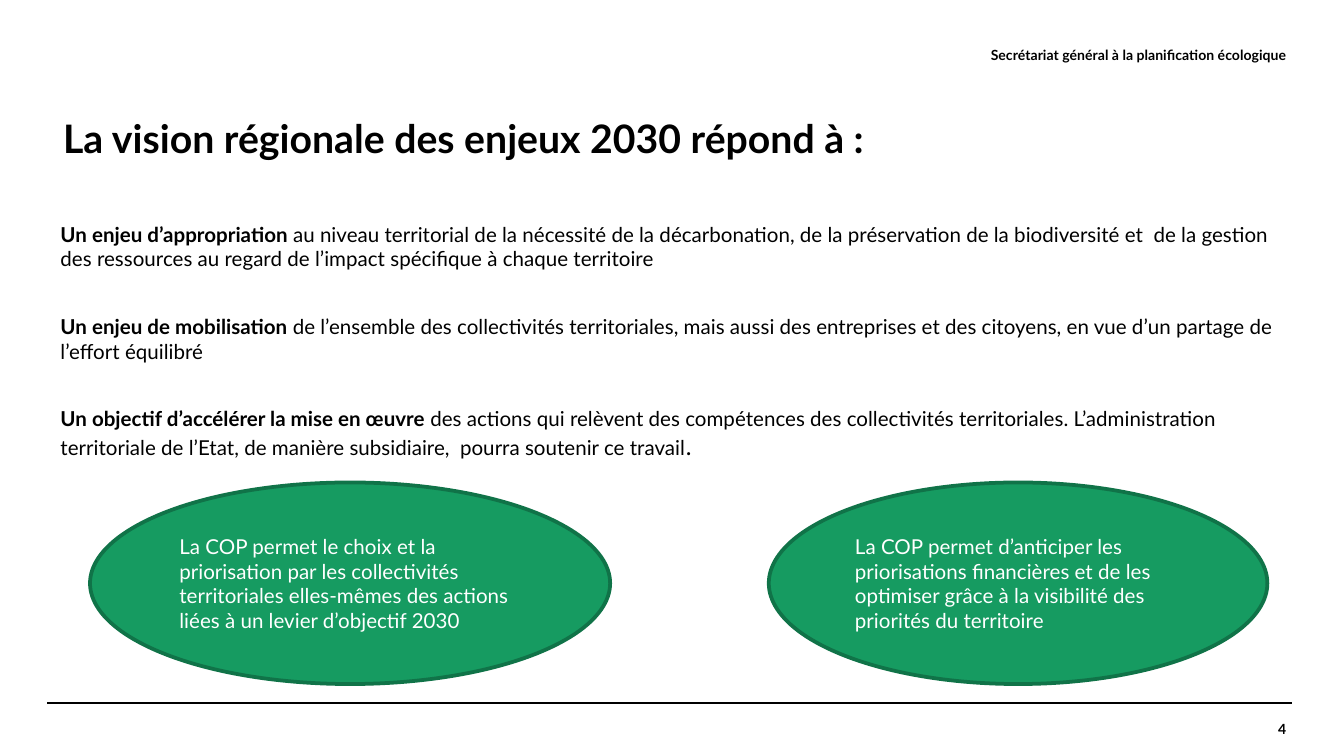
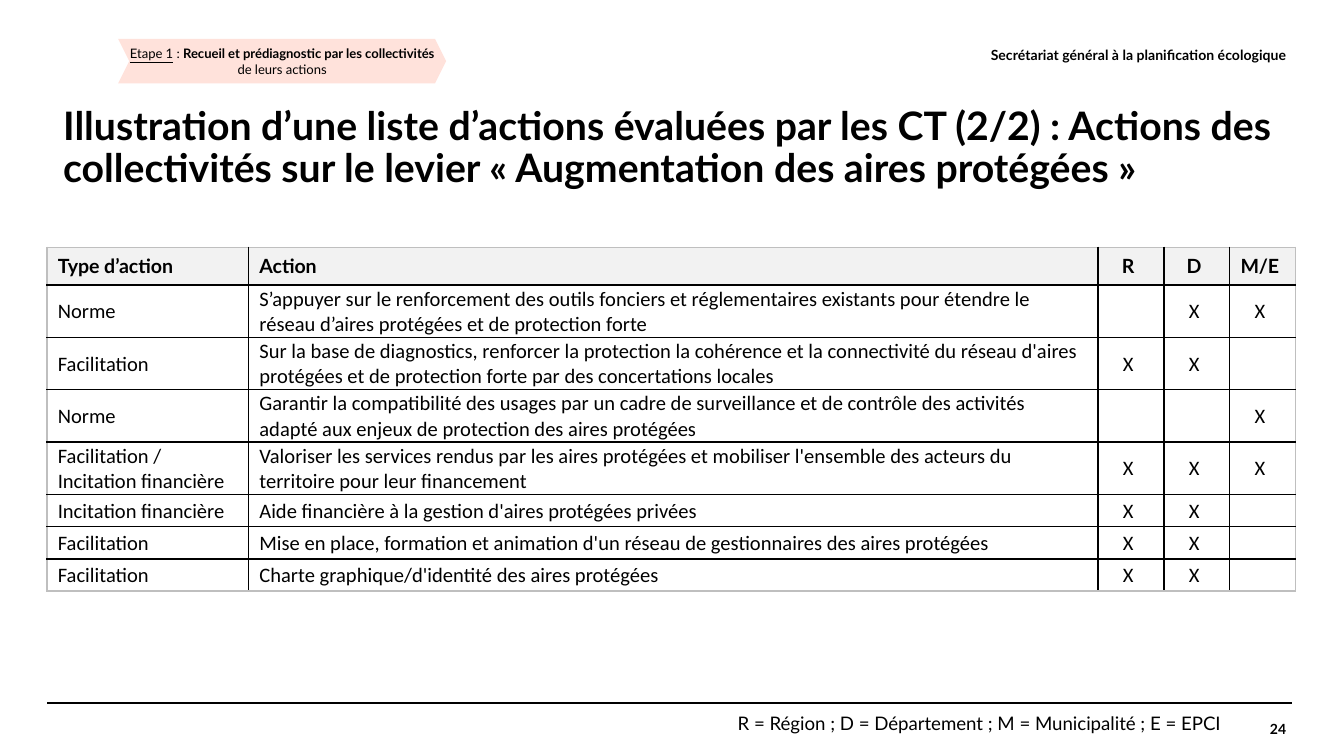
from dataclasses import dataclass
from typing import NamedTuple

from lxml.etree import SubElement
from pptx import Presentation
from pptx.dml.color import RGBColor
from pptx.enum.shapes import MSO_CONNECTOR, MSO_SHAPE
from pptx.enum.text import MSO_ANCHOR, MSO_AUTO_SIZE, PP_ALIGN
from pptx.oxml.ns import qn
from pptx.util import Inches, Pt

BLACK = RGBColor(0x00, 0x00, 0x00)
WHITE = RGBColor(0xFF, 0xFF, 0xFF)
GREEN = RGBColor(0x16, 0x9B, 0x61)
DARK_GREEN = RGBColor(0x10, 0x73, 0x48)
PINK = RGBColor(0xFF, 0xE2, 0xDB)
HEADER_GREY = RGBColor(0xF2, 0xF2, 0xF2)
FRAME_GREY = RGBColor(0xBF, 0xBF, 0xBF)
LATO = "Lato"
CALIBRI = "Calibri"
LEFT = 0.35
RULE_Y = 5.23
RULE_SPANS = [(0.35, 9.57), (0.39, 9.61)]


class Box(NamedTuple):
    left: float
    top: float
    width: float
    height: float

    def lengths(self) -> list:
        return [Inches(v) for v in self]


@dataclass
class Span:
    text: str
    bold: bool = False
    underline: bool = False
    size: float | None = None


@dataclass
class Bubble:
    box: Box
    text: str


class ActionRow(NamedTuple):
    kind: str
    action: str
    actors: str


TITLE_1 = "La vision régionale des enjeux 2030 répond à :"
TITLE_2 = (
    "Illustration d’une liste d’actions évaluées par les CT (2/2) : Actions des "
    "collectivités sur le levier « Augmentation des aires protégées »"
)
STAKES = [
    [Span("Un enjeu d’appropriation ", bold=True),
     Span("au niveau territorial de la nécessité de la décarbonation, de la préservation de la "
          "biodiversité et  de la gestion des ressources au regard de l’impact spécifique à "
          "chaque territoire")],
    [Span("Un enjeu de mobilisation ", bold=True),
     Span("de l’ensemble des collectivités territoriales, mais aussi des entreprises et des "
          "citoyens, en vue d’un partage de l’effort équilibré")],
    [Span("Un objectif d’accélérer la mise en œuvre ", bold=True),
     Span("des actions qui relèvent des compétences des collectivités territoriales. "
          "L’administration territoriale de l’Etat, de manière subsidiaire,  pourra soutenir "
          "ce travail"),
     Span(".", size=13)],
]
BUBBLES = [
    Bubble(Box(0.67, 3.59, 3.87, 1.5),
           "La COP permet le choix et la priorisation par les collectivités territoriales "
           "elles-mêmes des actions liées à un levier d’objectif 2030"),
    Bubble(Box(5.72, 3.59, 3.71, 1.5),
           "La COP permet d’anticiper les priorisations financières et de les optimiser grâce "
           "à la visibilité des priorités du territoire"),
]
STEP = [
    Span("Etape 1", underline=True),
    Span(" : "),
    Span("Recueil et prédiagnostic par les collectivités ", bold=True),
    Span("de leurs actions"),
]
ACTORS = {"R": "R", "D": "D", "M": "M/E"}
ACTIONS = [
    ActionRow("Norme", "S’appuyer sur le renforcement des outils fonciers et réglementaires "
              "existants pour étendre le réseau d’aires protégées et de protection forte", "DM"),
    ActionRow("Facilitation", "Sur la base de diagnostics, renforcer la protection la cohérence et "
              "la connectivité du réseau d'aires protégées et de protection forte par des "
              "concertations locales", "RD"),
    ActionRow("Norme", "Garantir la compatibilité des usages par un cadre de surveillance et de "
              "contrôle des activités adapté aux enjeux de protection des aires protégées", "M"),
    ActionRow("Facilitation / Incitation financière", "Valoriser les services rendus par les aires "
              "protégées et mobiliser l'ensemble des acteurs du territoire pour leur financement",
              "RDM"),
    ActionRow("Incitation financière", "Aide financière à la gestion d'aires protégées privées",
              "RD"),
    ActionRow("Facilitation", "Mise en place, formation et animation d'un réseau de gestionnaires "
              "des aires protégées", "RD"),
    ActionRow("Facilitation", "Charte graphique/d'identité des aires protégées", "RD"),
]
COLUMN_WIDTHS = [1.5, 6.32, 0.49, 0.49, 0.49]
ROW_HEIGHTS = [0.28] + [0.39] * 4 + [0.24] * 3


def style_font(font, size: float, color: RGBColor = BLACK, bold: bool = False,
               name: str = LATO) -> None:
    font.name, font.size, font.bold = name, Pt(size), bold
    font.color.rgb = color


def set_margins(target, left: float, top: float, right: float, bottom: float) -> None:
    target.margin_left, target.margin_top = Inches(left), Inches(top)
    target.margin_right, target.margin_bottom = Inches(right), Inches(bottom)


def write_spans(p, spans: list[Span], size: float) -> None:
    for span in spans:
        r = p.add_run()
        r.text = span.text
        style_font(r.font, span.size or size, bold=span.bold)
        r.font.underline = span.underline


def indent(p, left: float) -> None:
    """Set the left margin of a paragraph and drop its bullet."""
    pPr = p._p.get_or_add_pPr()
    pPr.set("marL", str(Inches(left)))
    pPr.set("indent", "0")
    SubElement(pPr, qn("a:buNone"))


def place(sp, box: Box) -> None:
    sp.left, sp.top, sp.width, sp.height = box.lengths()


def add_label(s, box: Box, text: str, size: float):
    tf = s.shapes.add_textbox(*box.lengths()).text_frame
    tf.word_wrap = True
    tf.text = text
    style_font(tf.paragraphs[0].runs[0].font, size)
    return tf


def add_margin_label(s, box: Box, text: str) -> None:
    """Small bold text set flush right at the top or bottom of the slide."""
    tf = add_label(s, box, text, 7.5)
    set_margins(tf, 0, 0, 0, 0)
    tf.vertical_anchor = MSO_ANCHOR.MIDDLE
    p = tf.paragraphs[0]
    p.alignment = PP_ALIGN.RIGHT
    p.runs[0].font.bold = True


def add_footer_rules(s) -> None:
    for start, end in RULE_SPANS:
        rule = s.shapes.add_connector(MSO_CONNECTOR.STRAIGHT, Inches(start), Inches(RULE_Y),
                                      Inches(end), Inches(RULE_Y))
        rule.line.color.rgb = BLACK
        rule.line.width = Pt(0.8)
        SubElement(rule._element.spPr, qn("a:effectLst"))


def add_slide(prs, layout: int, title: str, title_box: Box, number: int):
    s = prs.slides.add_slide(prs.slide_layouts[layout])
    add_footer_rules(s)
    place(s.shapes.title, title_box)
    tf = s.shapes.title.text_frame
    tf.text = title
    tf.auto_size = MSO_AUTO_SIZE.NONE
    tf.vertical_anchor = MSO_ANCHOR.MIDDLE
    p = tf.paragraphs[0]
    indent(p, 0.02)
    p.alignment = PP_ALIGN.LEFT
    p.line_spacing = 0.9
    style_font(p.runs[0].font, 21, bold=True)

    add_margin_label(s, Box(3.14, 0.21, 6.43, 0.39),
                     "Secrétariat général à la planification écologique")
    add_margin_label(s, Box(8.09, RULE_Y, 1.48, 0.39), str(number))
    return s


def add_filled_shape(s, kind: MSO_SHAPE, box: Box, fill: RGBColor):
    sp = s.shapes.add_shape(kind, *box.lengths())
    sp.shadow.inherit = False
    sp.fill.solid()
    sp.fill.fore_color.rgb = fill
    sp.text_frame.word_wrap = True
    sp.text_frame.vertical_anchor = MSO_ANCHOR.MIDDLE
    return sp


def add_bubble(s, bubble: Bubble) -> None:
    sp = add_filled_shape(s, MSO_SHAPE.OVAL, bubble.box, GREEN)
    sp.line.color.rgb = DARK_GREEN
    sp.line.width = Pt(2)
    sp.text_frame.text = bubble.text
    p = sp.text_frame.paragraphs[0]
    p.alignment = PP_ALIGN.LEFT
    style_font(p.runs[0].font, 11, WHITE)


def add_step_marker(s) -> None:
    sp = add_filled_shape(s, MSO_SHAPE.CHEVRON, Box(0.88, 0.29, 2.44, 0.33), PINK)
    sp.adjustments[0] = 0.25
    sp.line.fill.background()
    set_margins(sp.text_frame, 0, 0.05, 0, 0.05)
    p = sp.text_frame.paragraphs[0]
    p.alignment = PP_ALIGN.CENTER
    write_spans(p, STEP, 7)


def fill_body(sp) -> None:
    place(sp, Box(LEFT, 1.41, 9.21, 3.72))
    tf = sp.text_frame
    tf.auto_size = MSO_AUTO_SIZE.NONE
    tf.vertical_anchor = MSO_ANCHOR.TOP
    set_margins(tf, 0, 0.24, 0, 0)
    for i, spans in enumerate(STAKES):
        p = tf.add_paragraph() if i else tf.paragraphs[0]
        indent(p, 0.1)
        p.space_before = Pt(18 if i else 0)
        p.space_after = Pt(5)
        write_spans(p, spans, 11)


def set_borders(cell, colors: dict[str, RGBColor]) -> None:
    tcPr = cell._tc.get_or_add_tcPr()
    for i, (side, color) in enumerate(colors.items()):
        ln = tcPr.makeelement(qn(f"a:{side}"), {"w": str(Pt(1))})
        SubElement(SubElement(ln, qn("a:solidFill")), qn("a:srgbClr"), val=str(color))
        tcPr.insert(i, ln)


def format_cell(cell, text: str, header: bool, centred: bool) -> None:
    cell.text = text
    p = cell.text_frame.paragraphs[0]
    p.alignment = PP_ALIGN.CENTER if centred else PP_ALIGN.LEFT
    if header:
        set_margins(cell, 0.08, 0.05, 0.12, 0.05)
        cell.fill.solid()
        cell.fill.fore_color.rgb = HEADER_GREY
    else:
        set_margins(cell, 0.08, 0.01, 0.12, 0)
        cell.vertical_anchor = MSO_ANCHOR.MIDDLE
        cell.fill.background()
    for r in p.runs:
        style_font(r.font, 10.5 if header else 11, bold=header, name=LATO if header else CALIBRI)
    if not text:
        SubElement(p._p, qn("a:endParaRPr"), sz="1100")


def add_action_table(s) -> None:
    rows = [["Type d’action", "Action", *ACTORS.values()]]
    rows += [[a.kind, a.action, *("X" if key in a.actors else "" for key in ACTORS)]
             for a in ACTIONS]
    last_row, last_col = len(rows) - 1, len(COLUMN_WIDTHS) - 1
    box = Box(LEFT, 1.84, sum(COLUMN_WIDTHS), sum(ROW_HEIGHTS))
    table = s.shapes.add_table(len(rows), len(COLUMN_WIDTHS), *box.lengths()).table
    table.first_row = table.horz_banding = False
    for column, width in zip(table.columns, COLUMN_WIDTHS):
        column.width = Inches(width)
    for row, height in zip(table.rows, ROW_HEIGHTS):
        row.height = Inches(height)
    for i, texts in enumerate(rows):
        for j, text in enumerate(texts):
            cell = table.cell(i, j)
            format_cell(cell, text, header=i == 0, centred=j >= 2)
            on_frame = {"lnL": j == 0, "lnR": j == last_col, "lnT": i == 0, "lnB": i == last_row}
            set_borders(cell, {side: FRAME_GREY if outer else BLACK
                               for side, outer in on_frame.items()})


def main() -> None:
    prs = Presentation()
    prs.slide_width = Inches(10)
    prs.slide_height = prs.slide_width * 9 // 16

    s = add_slide(prs, 1, TITLE_1, Box(LEFT, 0.75, 9.21, 0.59), 4)
    fill_body(s.placeholders[1])
    for bubble in BUBBLES:
        add_bubble(s, bubble)

    s = add_slide(prs, 5, TITLE_2, Box(LEFT, 0.75, 9.41, 0.71), 24)
    add_action_table(s)
    add_label(s, Box(5.39, 5.25, 4.61, 0.27),
              "R = Région ; D = Département ; M = Municipalité ; E = EPCI", 10)
    add_step_marker(s)

    prs.save("out.pptx")


if __name__ == "__main__":
    main()
